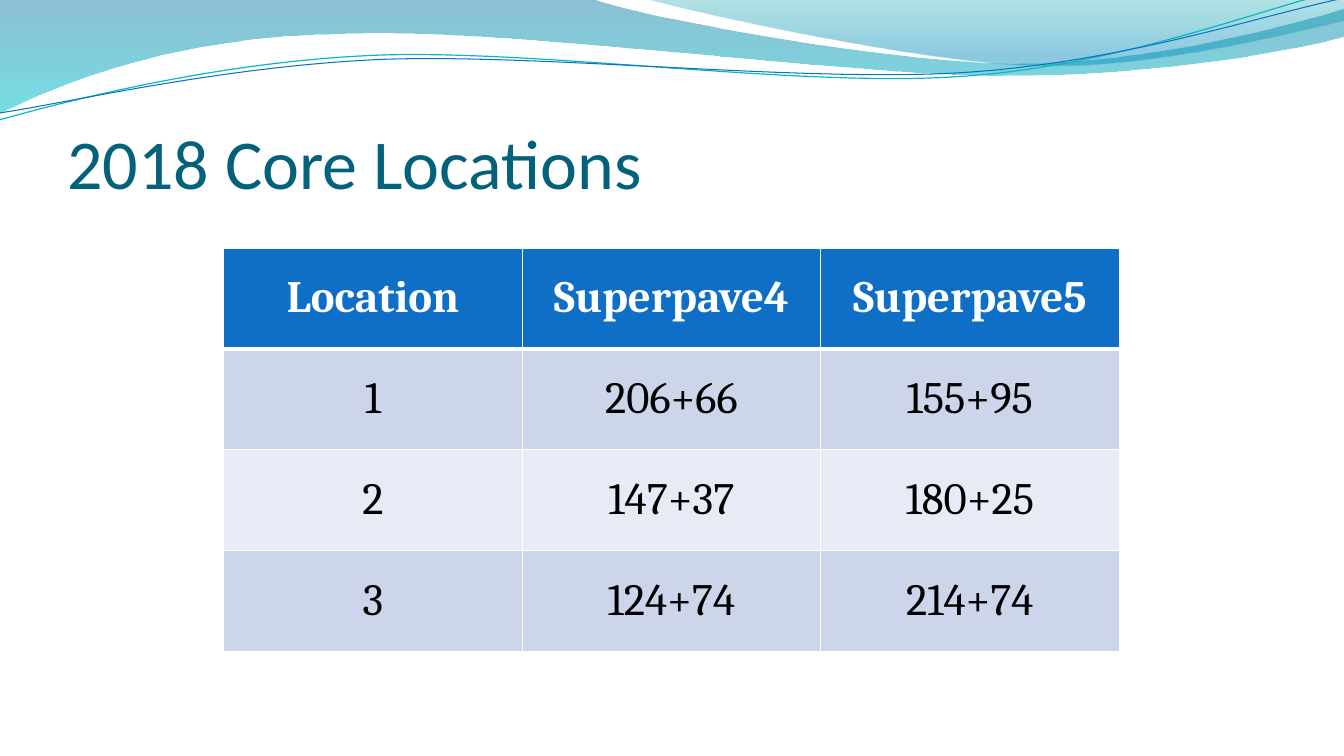
"""Build the 2018 core locations slide: a wave banner, a title and a table."""
from dataclasses import dataclass
from math import cos, radians, sin

from lxml.etree import SubElement
from pptx import Presentation
from pptx.dml.color import RGBColor
from pptx.enum.text import MSO_ANCHOR, PP_ALIGN
from pptx.oxml import parse_xml
from pptx.oxml.ns import nsdecls, qn
from pptx.util import Pt

PX = 9144
COLORS = {
    "title": "04617B",
    "header": "0F6FC6",
    "odd_row": "CCD5EA",
    "even_row": "E7EBF5",
    "white": "FFFFFF",
    "black": "000000",
    "deep_blue": "0074A1",
    "turquoise": "00C6CF",
    "teal": "00A1A9",
    "sky": "008BBF",
    "cyan_line": "0AB8BF",
    "blue_line": "0F6FC6",
}
ROWS = [
    ("Location", "Superpave4", "Superpave5"),
    ("1", "206+66", "155+95"),
    ("2", "147+37", "180+25"),
    ("3", "124+74", "214+74"),
]
COLUMN_WIDTH, ROW_HEIGHT = 296, 100


@dataclass(frozen=True)
class GradientStop:
    position: float
    color: str
    opacity: int


@dataclass(frozen=True)
class Wave:
    """A path whose segments hold one line end or three curve points."""
    start: tuple
    segments: tuple
    stops: tuple = ()
    line_color: str = ""
    line_width: float = 0
    center: tuple = (0, 0)
    tilt: float = 0


WAVES = [
    Wave((-1, -1),
         ((587, -1), (634, 17, 885, 63, 1011, 63), (1138, 63, 1278, 26, 1333, 9),
          (1335, 36), (1311, 44, 1160, 76, 994, 75), (829, 75, 509, 28, 343, 34),
          (172, 36, 61, 83, -1, 113)),
         stops=(GradientStop(0, "deep_blue", 45), GradientStop(1, "turquoise", 55))),
    Wave((639, -1),
         ((679, 11, 909, 62, 1025, 65), (1141, 69, 1282, 32, 1333, 21), (1333, 0)),
         stops=(GradientStop(0, "teal", 30), GradientStop(0.8, "sky", 45))),
    Wave((-1, 119),
         ((64, 101, 211, 62, 369, 55), (527, 48, 790, 87, 950, 76),
          (1110, 66, 1252, 8, 1331, -10)),
         line_color="cyan_line", line_width=0.85, center=(665, 58), tilt=-2.7),
    Wave((0, 112),
         ((63, 103, 218, 66, 378, 59), (537, 53, 796, 82, 955, 72),
          (1115, 62, 1255, 14, 1334, -2)),
         line_color="blue_line", line_width=0.75, center=(667, 59), tilt=-2.7),
]


def rgb(name: str) -> RGBColor:
    return RGBColor.from_string(COLORS[name])


def level_point(wave: Wave, x: float, y: float) -> tuple:
    """Return a point in EMU with the tilt of its wave taken out."""
    angle = radians(-wave.tilt)
    center_x, center_y = wave.center
    across, down = x - center_x, y - center_y
    return (round((center_x + across * cos(angle) - down * sin(angle)) * PX),
            round((center_y + across * sin(angle) + down * cos(angle)) * PX))


def bend_segments(shape, segments: tuple) -> None:
    """Join each three line ends that belong to a curve into a cubic segment."""
    line_ends = iter(list(shape.element.spPr.iter(qn("a:lnTo"))))
    for segment in segments:
        first = next(line_ends)
        if len(segment) == 6:
            first.tag = qn("a:cubicBezTo")
            for _ in range(2):
                following = next(line_ends)
                first.append(following[0])
                following.getparent().remove(following)


def bend_path(shape, segments: tuple) -> None:
    """Replace the straight path commands with curves where the wave has them."""
    drawing = next(shape.element.spPr.iter(qn("a:moveTo"))).getparent()
    points = iter([list(end)[0] for end in drawing.findall(qn("a:lnTo"))])
    for line_end in drawing.findall(qn("a:lnTo")):
        drawing.remove(line_end)
    for index, segment in enumerate(segments, start=1):
        tag = "a:cubicBezTo" if len(segment) == 6 else "a:lnTo"
        command = SubElement(drawing, qn(tag))
        drawing.insert(index, command)
        for _ in range(len(segment) // 2):
            command.append(next(points))


def draw_wave(slide, wave: Wave) -> None:
    points = [level_point(wave, *wave.start)]
    for segment in wave.segments:
        points += [level_point(wave, x, y) for x, y in zip(segment[::2], segment[1::2])]
    builder = slide.shapes.build_freeform(*points[0], scale=1.0)
    builder.add_line_segments(points[1:], close=bool(wave.stops))
    shape = builder.convert_to_shape()
    bend_path(shape, wave.segments)
    shape.rotation = wave.tilt
    shape.shadow.inherit = False
    if not wave.stops:
        shape.fill.background()
        shape.line.color.rgb = rgb(wave.line_color)
        shape.line.width = Pt(wave.line_width)
        return
    shape.line.fill.background()
    shape.fill.gradient()
    shape.fill.gradient_angle = 270
    for gradient_stop, stop in zip(shape.fill.gradient_stops, wave.stops):
        gradient_stop.position = stop.position
        gradient_stop.color.rgb = rgb(stop.color)
    for color, stop in zip(shape.element.spPr.iter(qn("a:srgbClr")), wave.stops):
        SubElement(color, qn("a:alpha")).set("val", str(stop.opacity * 1000))


def write_text(text_frame, text: str, *, font: str, size: int, color: str,
               bold: bool = False, align=PP_ALIGN.LEFT) -> None:
    paragraph = text_frame.paragraphs[0]
    paragraph.alignment = align
    run = paragraph.add_run()
    run.text = text
    run.font.name = font
    run.font.size = Pt(size)
    run.font.bold = bold
    run.font.color.rgb = rgb(color)


def add_title(slide, text: str) -> None:
    title = slide.shapes.title
    title.left, title.top, title.width, title.height = (n * PX for n in (67, 77, 1200, 125))
    frame = title.text_frame
    frame.word_wrap = True
    frame.vertical_anchor = MSO_ANCHOR.BOTTOM
    frame.margin_left = frame.margin_right = frame.margin_bottom = 0
    frame.margin_top = 5 * PX
    write_text(frame, text, font="Calibri", size=50, color="title")


def set_borders(cell, top: int, bottom: int) -> None:
    """Give a cell white borders, with top and bottom widths in points."""
    properties = cell._tc.get_or_add_tcPr()
    for index, (side, width) in enumerate((("L", 1), ("R", 1), ("T", top), ("B", bottom))):
        properties.insert(index, parse_xml(
            f'<a:ln{side} {nsdecls("a")} w="{Pt(width)}"><a:solidFill>'
            f'<a:srgbClr val="{COLORS["white"]}"/></a:solidFill></a:ln{side}>'))


def add_locations_table(slide, left: int, top: int) -> None:
    row_count, column_count = len(ROWS), len(ROWS[0])
    table = slide.shapes.add_table(
        row_count, column_count, left * PX, top * PX,
        column_count * COLUMN_WIDTH * PX, row_count * ROW_HEIGHT * PX).table
    for row_index, values in enumerate(ROWS):
        is_header = row_index == 0
        fill = "header" if is_header else "odd_row" if row_index % 2 else "even_row"
        for column_index, value in enumerate(values):
            cell = table.cell(row_index, column_index)
            cell.vertical_anchor = MSO_ANCHOR.MIDDLE
            cell.fill.solid()
            cell.fill.fore_color.rgb = rgb(fill)
            set_borders(cell, top=3 if row_index == 1 else 1, bottom=3 if is_header else 1)
            write_text(cell.text_frame, value, font="Cambria", size=32, bold=is_header,
                       color="white" if is_header else "black", align=PP_ALIGN.CENTER)


def main() -> None:
    presentation = Presentation()
    presentation.slide_width, presentation.slide_height = 1333 * PX, 750 * PX
    slide = presentation.slides.add_slide(presentation.slide_layouts[5])
    for wave in WAVES:
        draw_wave(slide, wave)
    add_title(slide, "2018 Core Locations")
    add_locations_table(slide, 222, 246)
    presentation.save("out.pptx")


if __name__ == "__main__":
    main()
